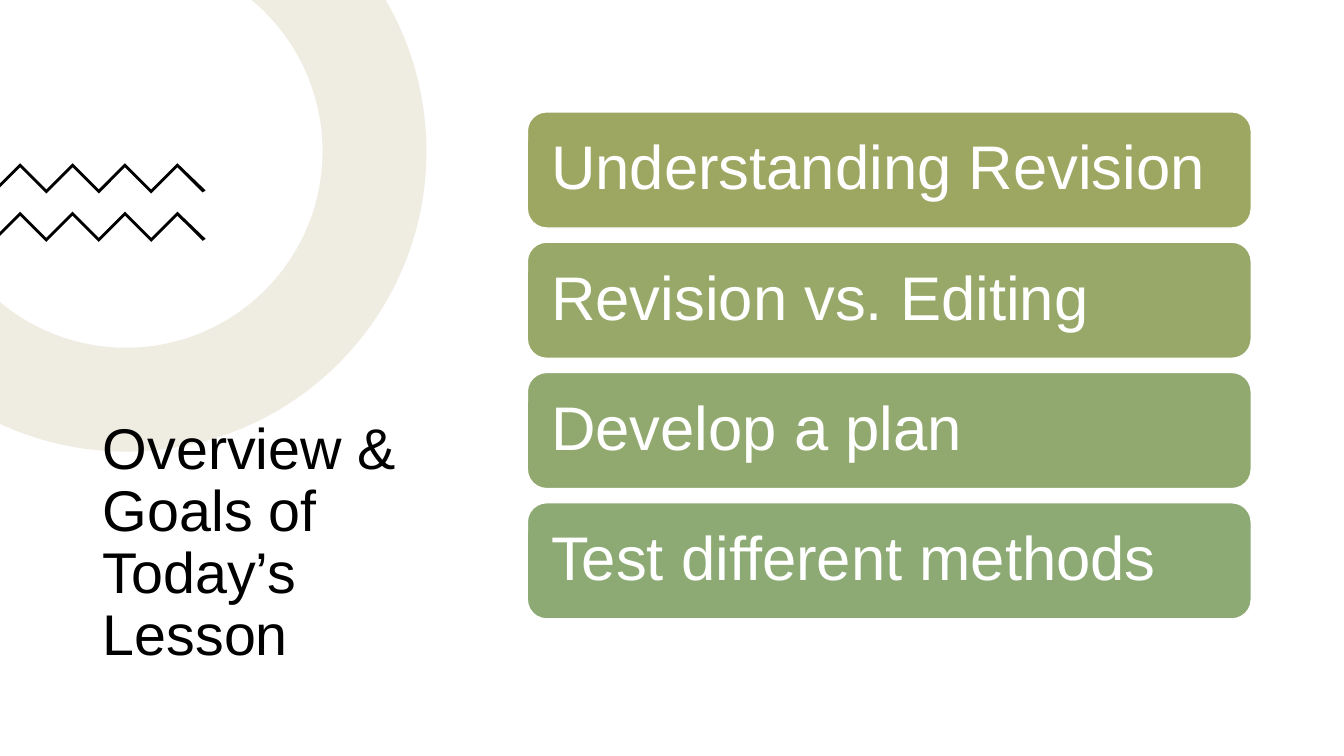
from math import acos, asin, cos, pi, sin, tan

from lxml.etree import SubElement
from pptx import Presentation
from pptx.dml.color import RGBColor
from pptx.enum.shapes import MSO_SHAPE
from pptx.enum.text import MSO_ANCHOR, MSO_AUTO_SIZE, PP_ALIGN
from pptx.oxml.ns import qn
from pptx.util import Pt

PX = 9144  # EMU in one px, 100 px to the inch
FONT = "Arial"
WHITE = RGBColor(0xFF, 0xFF, 0xFF)
BLACK = RGBColor(0, 0, 0)
SAND = RGBColor(0xB2, 0xA0, 0x72)
GOALS = [
    ("Understanding Revision", RGBColor(0x9E, 0xA7, 0x62)),
    ("Revision vs. Editing", RGBColor(0x97, 0xA8, 0x68)),
    ("Develop a plan", RGBColor(0x91, 0xA9, 0x6E)),
    ("Test different methods", RGBColor(0x8D, 0xAA, 0x74)),
]


def put_text(shape, text, size, color, inset=(10, 5)):
    frame = shape.text_frame
    frame.word_wrap = True
    frame.auto_size = MSO_AUTO_SIZE.NONE
    frame.vertical_anchor = MSO_ANCHOR.MIDDLE
    frame.margin_left = frame.margin_right = inset[0] * PX
    frame.margin_top = frame.margin_bottom = inset[1] * PX
    para = frame.paragraphs[0]
    para.alignment = PP_ALIGN.LEFT
    para.line_spacing = 0.9
    run = para.add_run()
    run.text = text
    run.font.name = FONT
    run.font.size = Pt(size)
    run.font.color.rgb = color


def add_outline(slide, points, color):
    """Draw a closed, filled outline through points given in px."""
    start, *rest = [(x * PX, y * PX) for x, y in points]
    pen = slide.shapes.build_freeform(*start, scale=1.0)
    pen.add_line_segments(rest, close=True)
    shape = pen.convert_to_shape()
    shape.shadow.inherit = False
    shape.fill.solid()
    shape.fill.fore_color.rgb = color
    shape.line.fill.background()
    return shape


def arc(x, y, radius):
    """Curve points from the slide's top edge clockwise to its left edge."""
    def at(angle, pull=0):
        return (x + radius * (cos(angle) - pull * sin(angle)),
                y + radius * (sin(angle) + pull * cos(angle)))

    knots = [-asin(y / radius), 0, pi / 2, pi - acos(x / radius)]
    points = [at(knots[0])]
    for a, b in zip(knots, knots[1:]):
        pull = 4 / 3 * tan((b - a) / 4)
        points += [at(a, pull), at(b, -pull), at(b)]
    return points


def bend(lines):
    """Turn each three line segments into one curve."""
    for i in range(0, len(lines), 3):
        first, *others = lines[i:i + 3]
        curve = first.makeelement(qn("a:cubicBezTo"))
        first.addprevious(curve)
        for line in (first, *others):
            curve.append(line[0])
            line.getparent().remove(line)


def add_ring(slide, x, y, outer, inner):
    rim, hole = arc(x, y, outer), arc(x, y, inner)[::-1]
    ring = add_outline(slide, rim + hole, SAND)
    lines = list(ring.element.iter(qn("a:lnTo")))
    side = len(rim) - 1  # the straight edge between rim and hole
    bend(lines[:side])
    bend(lines[side + 1:])
    tint = next(ring.element.spPr.iter(qn("a:srgbClr")))
    SubElement(tint, qn("a:alpha")).set("val", "20000")


def add_zigzag(slide, top, left=20, step=26, thick=4):
    upper = [(left + step * i, top + step * (i % 2)) for i in range(7)]
    lower = [(x, y + thick) for x, y in reversed(upper)]
    tip = [(204, top + 27), (201, top + 29)]
    tail = [(0, top + 24), (0, top + 20)]
    add_outline(slide, upper + tip + lower + tail, BLACK)


def set_title(slide, text, left, top, width, height):
    title = slide.shapes.title
    title.left, title.top = left * PX, top * PX
    title.width, title.height = width * PX, height * PX
    put_text(title, text, 41, BLACK)
    slide.shapes.element.append(title.element)  # in front of the ring


def add_goals(slide, left, top, width, height, gap=14):
    count = len(GOALS)
    tall = (height - gap * (count - 1)) / count
    for i, (text, color) in enumerate(GOALS):
        y = top + i * (tall + gap)
        bar = slide.shapes.add_shape(
            MSO_SHAPE.ROUNDED_RECTANGLE,
            left * PX, round(y * PX), width * PX, round(tall * PX))
        bar.shadow.inherit = False
        bar.fill.solid()
        bar.fill.fore_color.rgb = color
        bar.line.color.rgb = WHITE
        bar.line.width = Pt(1)
        put_text(bar, text, 44, WHITE, inset=(18, 18))


def main():
    deck = Presentation()
    deck.slide_width, deck.slide_height = 1333 * PX, 750 * PX
    slide = deck.slides.add_slide(deck.slide_layouts[5])
    add_ring(slide, 125, 150, outer=298, inner=195)
    set_title(slide, "Overview & Goals of Today’s Lesson", 92, 404, 350, 271)
    for top in (162, 210):
        add_zigzag(slide, top)
    add_goals(slide, 523, 111, 718, 503)
    deck.save("out.pptx")


if __name__ == "__main__":
    main()
